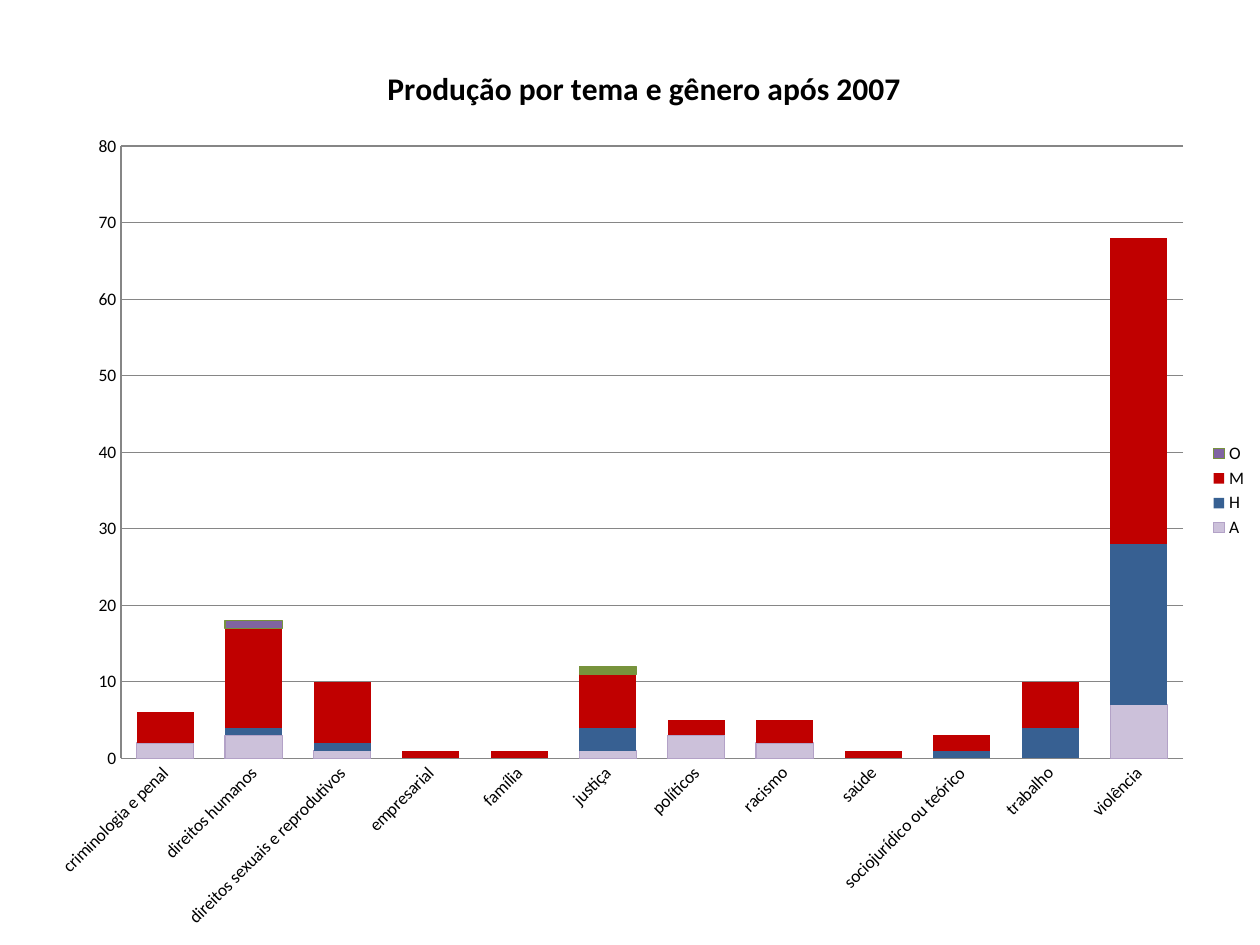
from dataclasses import dataclass

from lxml.etree import SubElement
from pptx import Presentation
from pptx.chart.data import CategoryChartData
from pptx.dml.color import RGBColor
from pptx.enum.chart import XL_CHART_TYPE, XL_LEGEND_POSITION, XL_TICK_MARK
from pptx.oxml.ns import qn
from pptx.util import Inches, Pt


@dataclass(frozen=True)
class Theme:
    font: str = "Calibri"
    text: str = "000000"
    grid: str = "868686"
    label_size: int = 10
    title_size: int = 18
    line_width: float = 0.75


THEME = Theme()
CHART_WIDTH, CHART_HEIGHT = 9.72, 7.21
TITLE = "Produção por tema e gênero após 2007"
THEMES = [
    "criminologia e penal", "direitos humanos", "direitos sexuais e reprodutivos",
    "empresarial", "família", "justiça", "políticos", "racismo", "saúde",
    "sociojurídico ou teórico", "trabalho", "violência",
]
# name: (values, fill, outline)
SERIES = {
    "A": ([2, 3, 1, None, None, 1, 3, 2, None, None, None, 7], "CCC1DA", "B3A2C7"),
    "H": ([None, 1, 1, None, None, 3, None, None, None, 1, 4, 21], "376092", None),
    "M": ([4, 13, 8, 1, 1, 7, 2, 3, 1, 2, 6, 40], "C00000", None),
    "O": ([None, 1] + [None] * 3 + [1] + [None] * 6, "8064A2", "77933C"),
}
JUSTICE_FILL = "77933C"


def style_font(font, size, bold=False):
    font.name, font.size, font.bold = THEME.font, Pt(size), bold
    font.color.rgb = RGBColor.from_string(THEME.text)


def style_line(line, color):
    line.color.rgb = RGBColor.from_string(color)
    line.width = Pt(THEME.line_width)


def style_fill(part, fill, outline):
    part.format.fill.solid()
    part.format.fill.fore_color.rgb = RGBColor.from_string(fill)
    if outline:
        style_line(part.format.line, outline)
    else:
        part.format.line.fill.background()


def place(parent, index, inner=False, **inches):
    """Set a chart part's manual layout, given in inches within the chart."""
    layout = parent.find(qn("c:layout"))
    if layout is None:
        layout = SubElement(parent, qn("c:layout"))
        parent.insert(index, layout)
    manual = SubElement(layout, qn("c:manualLayout"))
    if inner:
        SubElement(manual, qn("c:layoutTarget")).set("val", "inner")
    for mode in ("xMode", "yMode"):
        SubElement(manual, qn(f"c:{mode}")).set("val", "edge")
    for name, length in inches.items():
        whole = CHART_WIDTH if name in "xw" else CHART_HEIGHT
        SubElement(manual, qn(f"c:{name}")).set("val", str(length / whole))


def add_stacked_chart(page):
    chart_data = CategoryChartData()
    chart_data.categories = THEMES
    for name, (values, _, _) in SERIES.items():
        chart_data.add_series(name, values)
    frame = page.shapes.add_chart(
        XL_CHART_TYPE.COLUMN_STACKED, Inches(0.28), Inches(0.29),
        Inches(CHART_WIDTH), Inches(CHART_HEIGHT), chart_data,
    )
    chart = frame.chart
    style_font(chart.font, THEME.label_size)
    return chart


def style_columns(chart):
    plot = chart.plots[0]
    plot.gap_width, plot.overlap = 55, 100
    plot.vary_by_categories = False
    for series in plot.series:
        _, fill, outline = SERIES[series.name]
        style_fill(series, fill, outline)
    justice = plot.series[-1].points[THEMES.index("justiça")]
    style_fill(justice, JUSTICE_FILL, JUSTICE_FILL)
    place(plot._element.getparent(), 0, inner=True, x=0.68, y=0.87, w=8.43, h=4.86)


def style_axes(chart):
    for axis in (chart.category_axis, chart.value_axis):
        axis.major_tick_mark = axis.minor_tick_mark = XL_TICK_MARK.NONE
        style_line(axis.format.line, THEME.grid)
        style_font(axis.tick_labels.font, THEME.label_size)
    labels = chart.category_axis._element.find(qn("c:txPr")).find(qn("a:bodyPr"))
    labels.set("rot", str(-45 * 60000))
    chart.value_axis.minimum_scale, chart.value_axis.maximum_scale = 0, 80
    chart.value_axis.major_unit = 10
    chart.value_axis.has_major_gridlines = True
    style_line(chart.value_axis.major_gridlines.format.line, THEME.grid)


def add_title(chart):
    chart.has_title = True
    title = chart.chart_title
    title.include_in_layout = False
    para = title.text_frame.paragraphs[0]
    para.text = TITLE
    style_font(para.font, THEME.title_size, bold=True)
    place(title._element, 1, x=2.75, y=0.19)


def add_legend(chart):
    chart.has_legend = True
    chart.legend.position = XL_LEGEND_POSITION.RIGHT
    chart.legend.include_in_layout = False
    style_font(chart.legend.font, THEME.label_size)


def main():
    deck = Presentation()
    deck.slide_width, deck.slide_height = Inches(10), Inches(7.5)
    page = deck.slides.add_slide(deck.slide_layouts[6])
    chart = add_stacked_chart(page)
    style_columns(chart)
    style_axes(chart)
    add_title(chart)
    add_legend(chart)
    deck.save("out.pptx")


if __name__ == "__main__":
    main()
